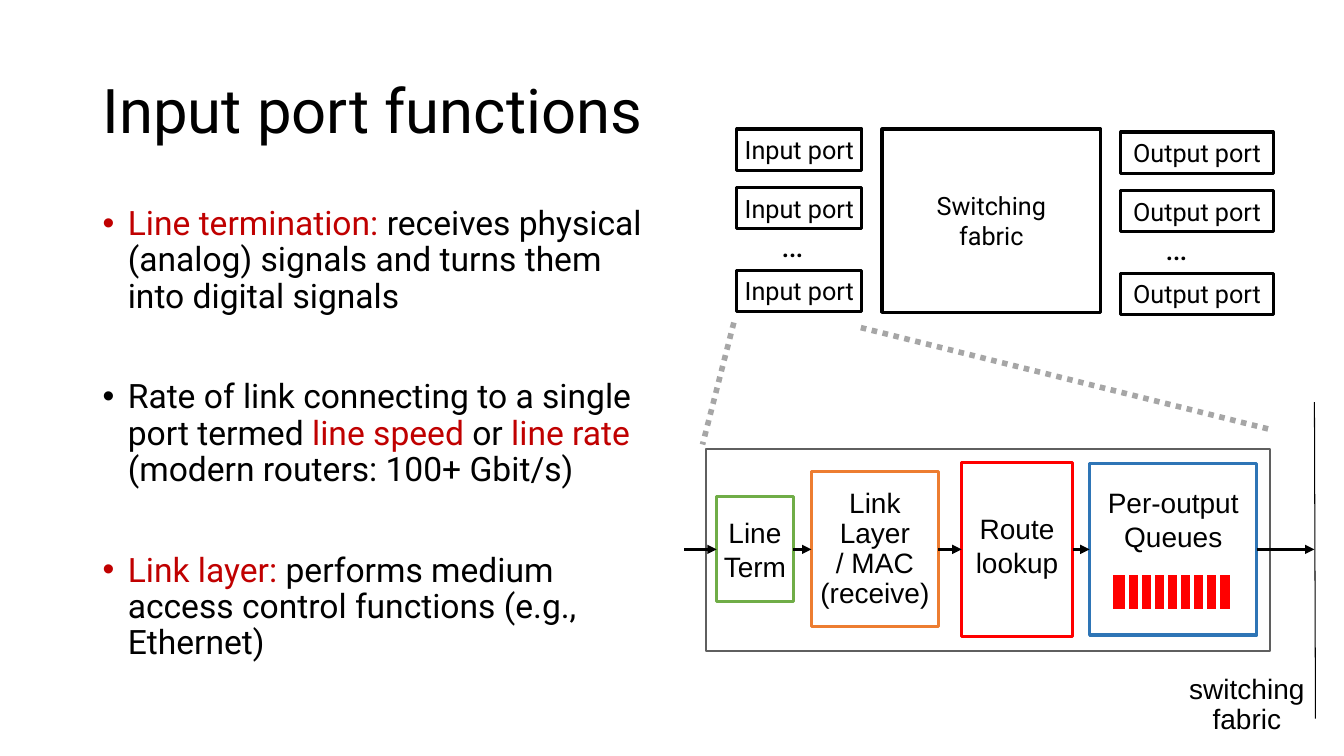
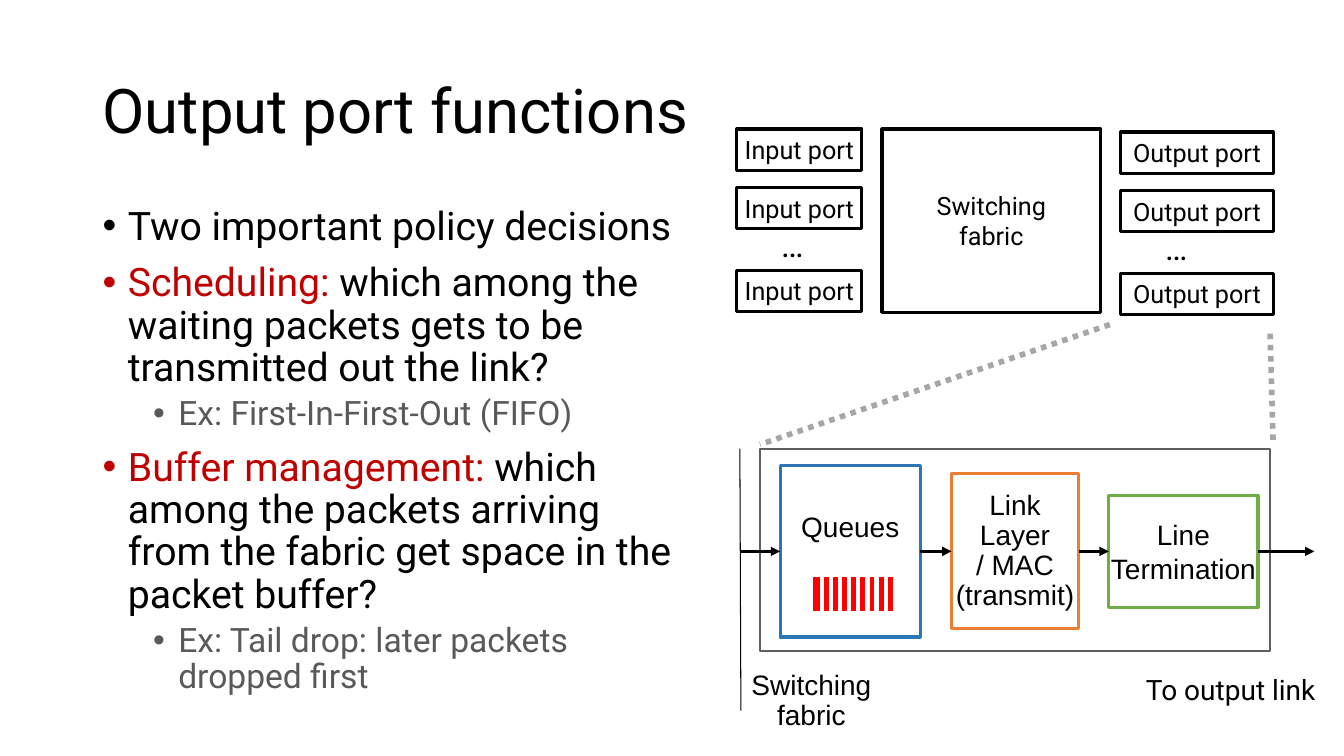
from dataclasses import dataclass

from lxml import etree
from pptx import Presentation
from pptx.dml.color import RGBColor
from pptx.enum.dml import MSO_LINE
from pptx.enum.shapes import MSO_CONNECTOR, MSO_SHAPE
from pptx.enum.text import MSO_ANCHOR, PP_ALIGN
from pptx.oxml.ns import qn
from pptx.util import Inches, Pt

RECT, STRAIGHT = MSO_SHAPE.RECTANGLE, MSO_CONNECTOR.STRAIGHT
TOP, MIDDLE = MSO_ANCHOR.TOP, MSO_ANCHOR.MIDDLE
LEFT, CENTER = PP_ALIGN.LEFT, PP_ALIGN.CENTER
DOTS = MSO_LINE.ROUND_DOT
WEST, EAST = 1, 3

CELL = Inches(0.1)  # grid: 133.33 columns by 75 rows
COLS, ROWS = 133.33, 75
COLORS = {
    "ink": "000000", "paper": "FFFFFF", "key": "C00000", "sub": "595959",
    "frame": "5F5F5F", "zoom": "A6A6A6", "line": "70AD47", "link": "ED7D31",
    "route": "FF0000", "queue": "2E75B6",
}
SANS, PLAIN = "Roboto", "Arial"

Box = tuple[float, float, float, float]
Point = tuple[float, float]


@dataclass(frozen=True)
class Item:
    """A bullet: its (text, colour) runs, size, level and space before."""
    runs: tuple[tuple[str, str], ...]
    size: int
    level: int = 0
    gap: int = 10


@dataclass(frozen=True)
class Stage:
    """A step of the port; drop is the space above its text, None centres it."""
    left: float
    width: float
    height: float
    color: str
    lines: tuple[str, ...]
    drop: float | None = None
    pitch: float = 1.0


@dataclass(frozen=True)
class Label:
    box: Box
    lines: tuple[str, ...]
    font: str = PLAIN


@dataclass(frozen=True)
class Port:
    """One slide: its text and the enlarged view of one port."""
    title: str
    width: float
    items: tuple[Item, ...]
    panel: Box
    rays: tuple[tuple[Point, Point], ...]
    stages: tuple[Stage, ...]
    mid: float
    store: Box
    entry: float
    wall: tuple[Point, Point]
    labels: tuple[Label, ...]


def span(*cells: float) -> list[int]:
    """Turn grid cells into lengths."""
    return [round(c * CELL) for c in cells]


def rgb(name: str) -> RGBColor:
    return RGBColor.from_string(COLORS[name])


def add_run(para, text: str, size: int, font: str = SANS, color: str = "ink") -> None:
    run = para.add_run()
    run.text = text
    run.font.size = Pt(size)
    run.font.name = font
    run.font.color.rgb = rgb(color)


def set_frame(frame, anchor=MIDDLE, wrap: bool = False, side: float = 0, drop: float = 0) -> None:
    frame.word_wrap = wrap
    frame.vertical_anchor = anchor
    frame.margin_left = frame.margin_right = span(side)[0]
    frame.margin_top, frame.margin_bottom = span(drop, 0)


def add_lines(frame, lines: tuple[str, ...], size: int, font: str,
              pitch: float = 1.0, align=CENTER) -> None:
    for i, text in enumerate(lines):
        para = frame.paragraphs[0] if i == 0 else frame.add_paragraph()
        para.alignment = align
        para.line_spacing = pitch
        add_run(para, text, size, font)


def add_rect(pane, box: Box, line: str, width: float, fill: str = "paper"):
    rect = pane.add_shape(RECT, *span(*box))
    rect.shadow.inherit = False
    rect.fill.solid()
    rect.fill.fore_color.rgb = rgb(fill)
    rect.line.color.rgb = rgb(line)
    rect.line.width = Pt(width)
    return rect


def add_text(pane, box: Box, lines: tuple[str, ...], size: int, font: str = SANS,
             pitch: float = 1.0, align=CENTER, side: float = 0) -> None:
    frame = pane.add_textbox(*span(*box)).text_frame
    set_frame(frame, side=side)
    add_lines(frame, lines, size, font, pitch, align)


def add_line(pane, start: Point, end: Point, color: str = "ink", width: float = 2.25,
             dash=None, arrow: bool = False):
    line = pane.add_connector(STRAIGHT, *span(*start, *end))
    line.line.color.rgb = rgb(color)
    line.line.width = Pt(width)
    if dash is not None:
        line.line.dash_style = dash
    props = line.element.spPr
    if arrow:
        etree.SubElement(props.find(qn("a:ln")), qn("a:tailEnd"), type="triangle")
    etree.SubElement(props, qn("a:effectLst"))
    return line


def add_items(pane, box: Box, items: tuple[Item, ...]) -> None:
    frame = pane.add_textbox(*span(*box)).text_frame
    set_frame(frame, TOP, True, 1, 0.5)
    for i, item in enumerate(items):
        para = frame.paragraphs[0] if i == 0 else frame.add_paragraph()
        para.level = item.level
        para.line_spacing = 0.9
        para.space_before = Pt(item.gap)
        props = para._p.get_or_add_pPr()
        props.set("marL", str(Inches(0.25 + 0.5 * item.level)))
        props.set("indent", str(-Inches(0.25)))
        etree.SubElement(props, qn("a:buFont"), typeface=PLAIN)
        etree.SubElement(props, qn("a:buChar"), char="•")
        for text, color in item.runs:
            add_run(para, text, item.size, SANS, color)


def draw_router(shapes) -> None:
    """Draw the overview of input ports, fabric and output ports."""
    pane = shapes.add_group_shape().shapes
    hub = add_rect(pane, (87.5, 12.8, 21.7, 18.2), "ink", 2.25).text_frame
    set_frame(hub, wrap=True, side=5)
    add_lines(hub, ("Switching fabric",), 18, SANS)
    for name, left, top, width in (("Input port", 73.1, 12.8, 12.4),
                                   ("Output port", 111.2, 13.1, 15.1)):
        for step in (0, 5.8, 14):
            port = add_rect(pane, (left, top + step, width, 4.1), "ink", 2.25).text_frame
            set_frame(port)
            add_lines(port, (name,), 18, SANS)
        add_text(pane, (left + 3.4, top + 8.9, 5.7, 5), ("…",), 24, align=LEFT, side=1)


def draw_store(shapes, box: Box) -> None:
    """Draw the packets waiting in a queue."""
    pane = shapes.add_group_shape().shapes
    left, top, width, height = box
    add_rect(pane, box, "paper", 3, "route")
    for i in range(8):
        x = left + width * (0.133 + 0.108 * i)
        add_line(pane, (x, top), (x, top + height), "paper", 3)


def draw_stages(shapes, port: Port) -> None:
    """Draw the steps centred on one row, joined by level arrows."""
    rects = []
    for stage in port.stages:
        box = (stage.left, port.mid - stage.height / 2, stage.width, stage.height)
        rect = add_rect(shapes, box, stage.color, 2.25)
        anchor = MIDDLE if stage.drop is None else TOP
        set_frame(rect.text_frame, anchor, drop=stage.drop or 0)
        add_lines(rect.text_frame, stage.lines, 20, PLAIN, stage.pitch)
        rects.append(rect)
    for prior, after in zip([None, *rects], [*rects, None]):
        arrow = add_line(shapes, (port.entry, port.mid), (130.4, port.mid), arrow=True)
        if prior is not None:
            arrow.begin_connect(prior, EAST)
        if after is not None:
            arrow.end_connect(after, WEST)


def draw_port(deck, port: Port) -> None:
    shapes = deck.slides.add_slide(deck.slide_layouts[6]).shapes
    add_text(shapes, (9.2, 4, 115, 14.5), (port.title,), 44, pitch=0.9, align=LEFT, side=1)
    add_items(shapes, (9.2, 20, port.width, 52), port.items)
    draw_router(shapes)
    add_rect(shapes, port.panel, "frame", 1.5)
    for start, end in port.rays:
        add_line(shapes, start, end, "zoom", 4, DOTS)
    add_line(shapes, *port.wall, width=0.75)
    draw_stages(shapes, port)
    draw_store(shapes, port.store)
    for label in port.labels:
        add_text(shapes, label.box, label.lines, 20, label.font, 0.9)


PORTS = (
    Port(
        title="Input port functions",
        width=56.7,
        items=(
            Item((("Line termination:", "key"),
                  (" receives physical (analog) signals and turns them into digital signals", "ink")), 24),
            Item((("Rate of link connecting to a single port termed ", "ink"),
                  ("line speed", "key"), (" or ", "ink"), ("line rate ", "key"),
                  ("(modern routers: 100+ Gbit/s)", "ink")), 24, gap=46),
            Item((("Link layer:", "key"),
                  (" performs medium access control functions (e.g., Ethernet)", "ink")), 24, gap=46),
        ),
        panel=(70, 44.5, 56, 20.1),
        rays=(((72.8, 32), (69.7, 44.1)), ((85.4, 32.5), (126, 42.6))),
        stages=(
            Stage(71.1, 7.6, 10.4, "line", ("Line", "Term")),
            Stage(80.5, 12.6, 15.4, "link", ("Link", "Layer", "/ MAC", "(receive)"), pitch=0.9),
            Stage(95.4, 11, 17.3, "route", ("Route", "lookup"), 4.9),
            Stage(108.1, 16.6, 17, "queue", ("Per-output", "Queues"), 2.2),
        ),
        mid=54.5,
        store=(110.2, 56.8, 12, 3.8),
        entry=67.9,
        wall=((130.4, 39.9), (130.5, 71.3)),
        labels=(Label((117, 65.4, 13.4, 9.1), ("switching", "fabric")),),
    ),
    Port(
        title="Output port functions",
        width=60.5,
        items=(
            Item((("Two important policy decisions", "ink"),), 28),
            Item((("Scheduling:", "key"),
                  (" which among the waiting packets gets to be transmitted out the link?", "ink")), 28),
            Item((("Ex: First-In-First-Out (FIFO)", "sub"),), 24, 1, 5),
            Item((("Buffer management:", "key"),
                  (" which among the packets arriving from the fabric get space in the packet buffer?",
                   "ink")), 28),
            Item((("Ex: Tail drop: later packets dropped first", "sub"),), 24, 1, 5),
        ),
        panel=(75.4, 44.5, 50.6, 20.1),
        rays=(((110.1, 32.2), (75.4, 44.1)), ((126, 33.1), (126.3, 43.9))),
        stages=(
            Stage(77.4, 13.9, 17, "queue", ("Queues",), 4.3),
            Stage(94.4, 12.6, 15.4, "link", ("Link", "Layer", "/ MAC", "(transmit)"), pitch=0.9),
            Stage(110, 14.8, 11.1, "line", ("Line", "Termination")),
        ),
        mid=54.7,
        store=(80.4, 57, 8.4, 3.8),
        entry=73.5,
        wall=((73.4, 44.5), (73.5, 70.5)),
        labels=(
            Label((73.8, 65, 13.4, 9.1), ("Switching", "fabric")),
            Label((112.6, 66.4, 19, 4.4), ("To output link",), SANS),
        ),
    ),
)


def main() -> None:
    deck = Presentation()
    deck.slide_width, deck.slide_height = span(COLS, ROWS)
    for port in PORTS:
        draw_port(deck, port)
    deck.save("out.pptx")


if __name__ == "__main__":
    main()
